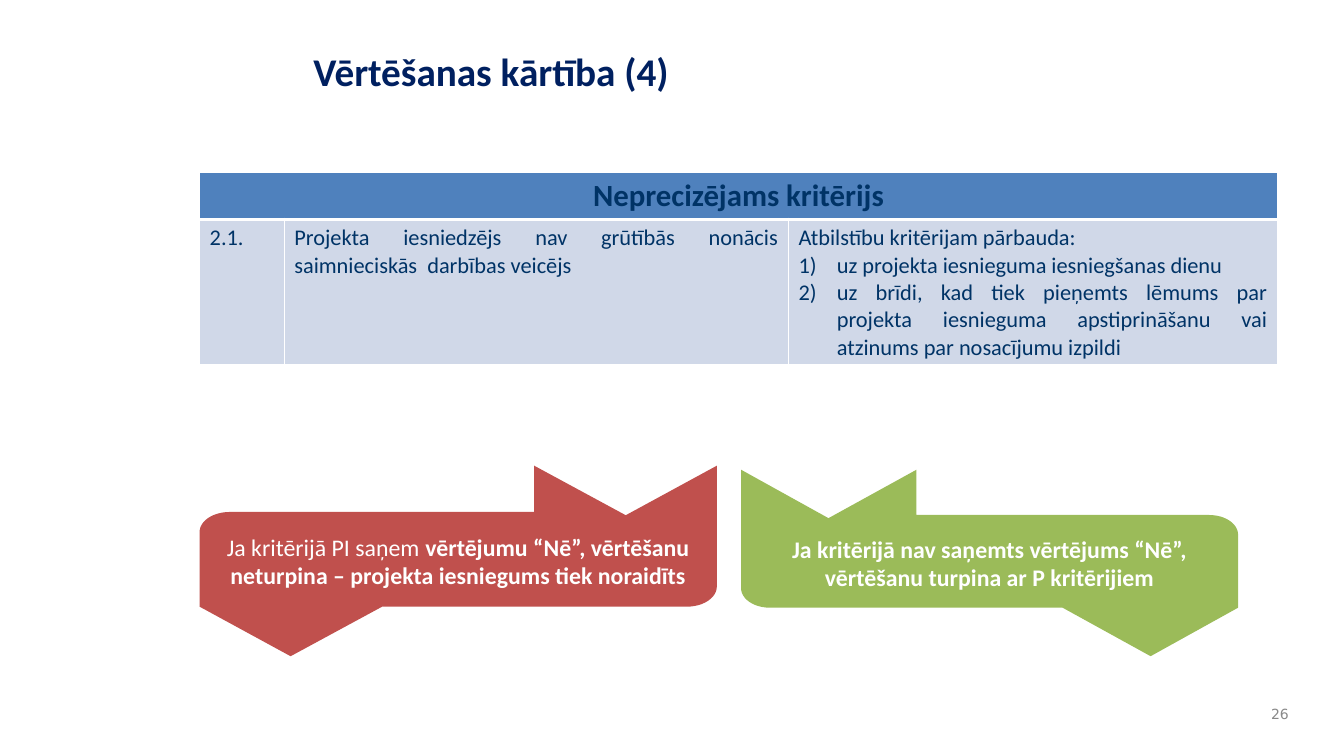
from math import cos, pi, sin
from lxml import etree
from pptx import Presentation
from pptx import util as u
from pptx.dml.color import RGBColor
from pptx.enum import text
from pptx.oxml import ns

NAVY = RGBColor(0x00, 0x20, 0x60)
INK = RGBColor(0x00, 0x33, 0x66)
BLUE = RGBColor(0x4F, 0x81, 0xBD)
PALE = RGBColor(0xD0, 0xD8, 0xE8)
RED = RGBColor(0xC0, 0x50, 0x4D)
GREEN = RGBColor(0x9B, 0xBB, 0x59)
GREY = RGBColor(0x89, 0x89, 0x89)
WHITE = RGBColor(0xFF, 0xFF, 0xFF)
LEFT, CENTER, RIGHT, JUST = (text.PP_ALIGN.LEFT, text.PP_ALIGN.CENTER,
                             text.PP_ALIGN.RIGHT, text.PP_ALIGN.JUSTIFY)


def arc(x, y, start):
    turns = [start + pi / 2 * i / 12 for i in range(13)]
    return [(x + 0.058 * cos(t), y - 0.105 * sin(t)) for t in turns]


RIBBON = [(1, 0), (0.824, 0.26), (0.647, 0), (0.647, 0.243),
          *arc(0.058, 0.348, pi / 2),
          (0, 0.74), (0.176, 1), (0.353, 0.74),
          *arc(0.942, 0.635, 3 * pi / 2)]


class Page:
    def __init__(self, slide, face="Calibri"):
        self.slide = slide
        self.face = face

    def style(self, para, size, color, bold=None, align=LEFT, face=None):
        para.alignment = align
        font = para.font
        font.name, font.size, font.bold = face or self.face, u.Pt(size), bold
        font.color.rgb = color

    def label(self, box, words, anchor, *look, **more):
        shape = self.slide.shapes.add_textbox(*map(u.Inches, box))
        frame = shape.text_frame
        frame.word_wrap = True
        frame.vertical_anchor = anchor
        frame.text = words
        self.style(frame.paragraphs[0], *look, **more)

    def ribbon(self, box, color, runs, flip=False):
        left, top, wide, high = box
        spots = [(u.Inches(left + wide * (1 - x if flip else x)),
                  u.Inches(top + high * y)) for x, y in RIBBON]
        path = self.slide.shapes.build_freeform(*spots[0])
        path.add_line_segments(spots[1:], close=True)
        shape = path.convert_to_shape()
        shape.shadow.inherit = False
        shape.fill.solid()
        shape.fill.fore_color.rgb = color
        shape.line.fill.background()
        frame = shape.text_frame
        frame.word_wrap = True
        frame.vertical_anchor = text.MSO_ANCHOR.MIDDLE
        para = frame.paragraphs[0]
        self.style(para, 17, WHITE, align=CENTER)
        for words, bold in runs:
            run = para.add_run()
            run.text = words
            run.font.bold = bold

    def border(self, cell, **widths):
        props = cell._tc.get_or_add_tcPr()
        for side in "LRTB":
            line = etree.SubElement(props, ns.qn("a:ln" + side),
                                    w=str(u.Pt(widths.get(side, 1))))
            fill = etree.SubElement(line, ns.qn("a:solidFill"))
            etree.SubElement(fill, ns.qn("a:srgbClr"), val=str(WHITE))

    def number(self, para):
        props = para._p.get_or_add_pPr()
        props.set("marL", str(u.Inches(0.38)))
        props.set("indent", str(u.Inches(-0.38)))
        etree.SubElement(props, ns.qn("a:buFont"), typeface="+mj-lt")
        etree.SubElement(props, ns.qn("a:buAutoNum"), type="arabicParenR")

    def table(self, box, cols, rows, head, body):
        shape = self.slide.shapes.add_table(len(rows), len(cols),
                                            *map(u.Inches, box))
        grid = shape.table
        for col, wide in zip(grid.columns, cols):
            col.width = u.Inches(wide)
        for row, high in zip(grid.rows, rows):
            row.height = u.Inches(high)
        for i in range(len(cols)):
            for j, color in enumerate((BLUE, PALE)):
                cell = grid.cell(j, i)
                self.border(cell, **{"TB"[1 - j]: 3})
                cell.fill.solid()
                cell.fill.fore_color.rgb = color
        top = grid.cell(0, 0)
        top.merge(grid.cell(0, len(cols) - 1))
        top.text = head
        self.style(top.text_frame.paragraphs[0], 22, INK, True, CENTER)
        for i, lines in enumerate(body):
            frame = grid.cell(1, i).text_frame
            frame.text = "\n".join(line[0] for line in lines)
            for para, (_, align, listed) in zip(frame.paragraphs, lines):
                if listed:
                    self.number(para)
                self.style(para, 16, INK, False, align)


def main():
    deck = Presentation()
    deck.slide_width, deck.slide_height = u.Inches(13.33), u.Inches(7.5)
    page = Page(deck.slides.add_slide(deck.slide_layouts[6]))
    page.label((3.01, 0.42, 9.65, 1.13), "Vērtēšanas kārtība (4)",
               text.MSO_ANCHOR.TOP, 28, NAVY, True)
    page.table(
        (1.98, 1.71, 10.69, 1.9), (0.84, 5, 4.85), (0.46, 1.44),
        "Neprecizējams kritērijs",
        [[("2.1.", LEFT, False)],
         [("Projekta iesniedzējs nav grūtībās nonācis "
           "saimnieciskās  darbības veicējs", JUST, False)],
         [("Atbilstību kritērijam pārbauda:", LEFT, False),
          ("uz projekta iesnieguma iesniegšanas dienu", LEFT, True),
          ("uz brīdi, kad tiek pieņemts lēmums par projekta iesnieguma "
           "apstiprināšanu vai atzinums par nosacījumu izpildi",
           JUST, True)]])
    page.label((12.44, 6.92, 0.44, 0.33), "26", text.MSO_ANCHOR.MIDDLE,
               10, GREY, align=RIGHT, face="DejaVu Sans")
    page.ribbon((1.98, 4.62, 5.13, 1.89), RED,
                [("Ja kritērijā PI saņem ", False),
                 ("vērtējumu “Nē”, vērtēšanu neturpina – "
                  "projekta iesniegums tiek noraidīts", True)])
    page.ribbon((7.35, 4.66, 4.93, 1.85), GREEN,
                [("Ja kritērijā nav saņemts vērtējums “Nē”, "
                  "vērtēšanu turpina ar P kritērijiem", True)], flip=True)
    deck.save("out.pptx")


if __name__ == "__main__":
    main()
